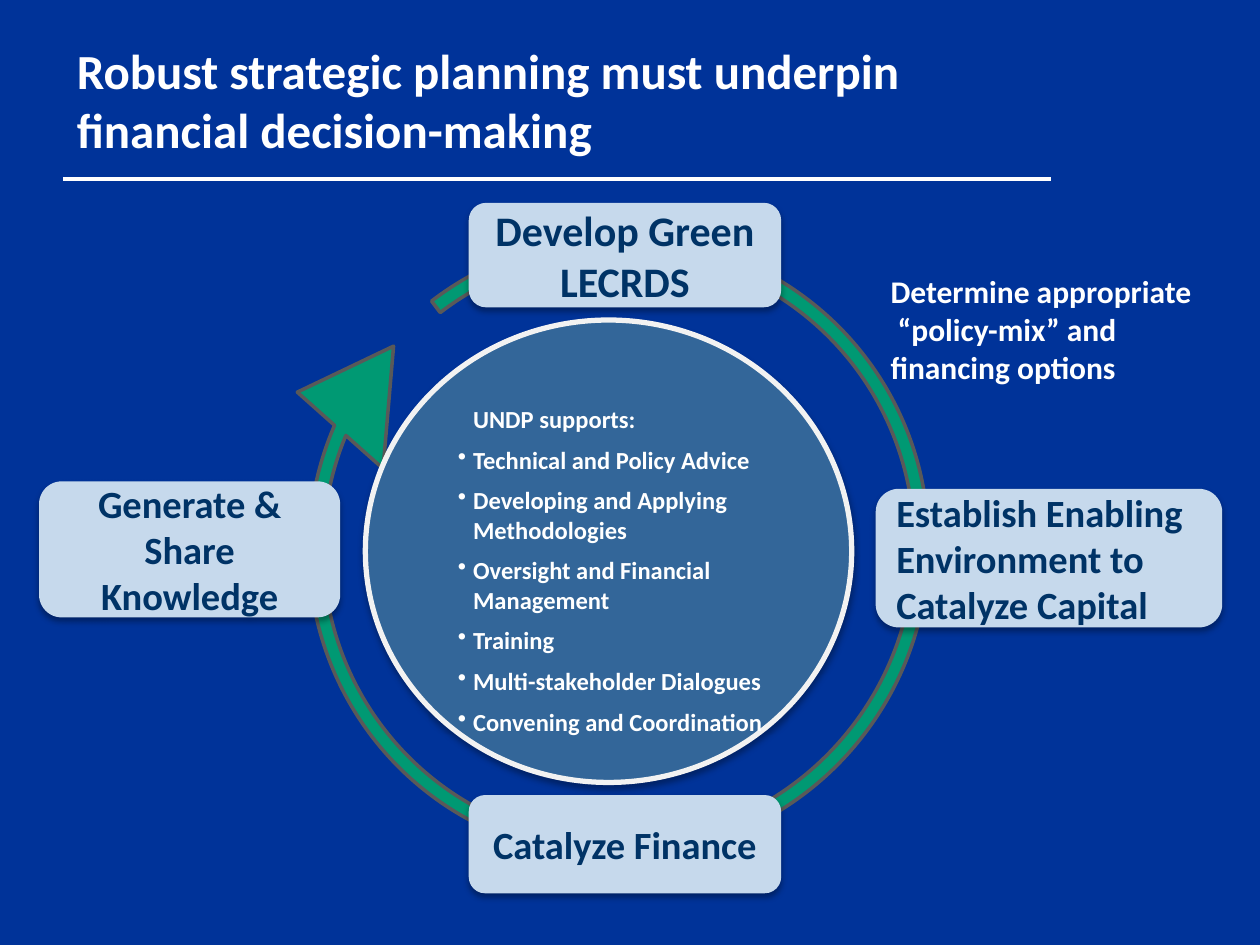
from lxml.etree import SubElement
from pptx import Presentation
from pptx.dml.color import RGBColor
from pptx.enum.shapes import MSO_CONNECTOR, MSO_SHAPE
from pptx.enum.text import MSO_ANCHOR, MSO_AUTO_SIZE, PP_ALIGN
from pptx.oxml.ns import qn
from pptx.util import Inches, Pt


def color(value):
    return RGBColor.from_string(value)


def apply_format(target, values):
    for name, value in values.items():
        setattr(target, name, value)


class CycleSlide:
    background = "003399"
    white = "FFFFFF"
    navy = "003366"
    font_name = "Calibri"

    def __init__(self, presentation):
        self.slide = presentation.slides.add_slide(presentation.slide_layouts[5])
        fill = self.slide.background.fill
        fill.solid()
        fill.fore_color.rgb = color(self.background)

    def format_frame(self, frame, anchor, side=0.1, top=0.05):
        apply_format(frame, {
            "word_wrap": True,
            "auto_size": MSO_AUTO_SIZE.NONE,
            "vertical_anchor": anchor,
            "margin_left": Inches(side),
            "margin_right": Inches(side),
            "margin_top": Inches(top),
            "margin_bottom": Inches(0.05),
        })

    def format_text(self, paragraph, text, size, text_color, alignment=PP_ALIGN.LEFT):
        paragraph.text = text
        paragraph.alignment = alignment
        apply_format(paragraph.font, {"name": self.font_name, "size": Pt(size), "bold": True})
        paragraph.font.color.rgb = color(text_color)

    def title(self, text, box):
        shape = self.slide.shapes.title
        apply_format(shape, dict(zip(("left", "top", "width", "height"), map(Inches, box))))
        self.format_frame(shape.text_frame, MSO_ANCHOR.TOP)
        self.format_text(shape.text_frame.paragraphs[0], text, 28, self.white)

    def shape(self, kind, box, fill, line=None, line_width=0, shadow=True):
        shape = self.slide.shapes.add_shape(kind, *map(Inches, box))
        shape.fill.solid()
        shape.fill.fore_color.rgb = color(fill)
        if line:
            shape.line.color.rgb = color(line)
            shape.line.width = Pt(line_width)
        else:
            shape.line.fill.background()
        shape.shadow.inherit = False
        if shadow:
            self.add_shadow(shape)
        return shape

    def add_shadow(self, shape):
        effects = shape._element.spPr.find(qn("a:effectLst"))
        outer = SubElement(effects, qn("a:outerShdw"), blurRad=str(Pt(3.5)),
                           dist=str(Pt(2.2)), dir="5400000", rotWithShape="0")
        black = SubElement(outer, qn("a:srgbClr"), val="000000")
        SubElement(black, qn("a:alpha"), val="32000")

    def cycle_arrow(self, box, rotation, adjustments):
        shape = self.shape(MSO_SHAPE.CIRCULAR_ARROW, box, "009973", "595959", 2, False)
        shape.rotation = rotation
        for index, value in enumerate(adjustments):
            shape.adjustments[index] = value

    def step(self, text, box, size=22, alignment=PP_ALIGN.CENTER):
        shape = self.shape(MSO_SHAPE.ROUNDED_RECTANGLE, box, "C6D9EC")
        self.format_frame(shape.text_frame, MSO_ANCHOR.MIDDLE, 0.11)
        self.format_text(shape.text_frame.paragraphs[0], text, size, self.navy, alignment)

    def support_circle(self, heading, items, box):
        shape = self.shape(MSO_SHAPE.OVAL, box, "336699", "F2F2F2", 3)
        frame = shape.text_frame
        self.format_frame(frame, MSO_ANCHOR.MIDDLE, 0.11, 0.35)
        for index, text in enumerate([heading, *items]):
            paragraph = frame.add_paragraph() if index else frame.paragraphs[0]
            properties = paragraph._p.get_or_add_pPr()
            properties.set("marL", str(Inches(0.18)))
            if index:
                properties.set("indent", str(Inches(-0.12)))
                SubElement(properties, qn("a:buChar"), char="•")
            self.format_text(paragraph, text, 14, self.white)
            paragraph.space_after = Pt(6.4)

    def rule(self, left, right, top):
        line = self.slide.shapes.add_connector(
            MSO_CONNECTOR.STRAIGHT, Inches(left), Inches(top), Inches(right), Inches(top))
        line.line.color.rgb = color(self.white)
        line.line.width = Pt(2.25)
        SubElement(line._element.spPr, qn("a:effectLst"))

    def label(self, text, box):
        shape = self.slide.shapes.add_textbox(*map(Inches, box))
        self.format_frame(shape.text_frame, MSO_ANCHOR.TOP)
        self.format_text(shape.text_frame.paragraphs[0], text, 18, self.white)


def main():
    presentation = Presentation()
    apply_format(presentation, {"slide_width": Inches(10), "slide_height": Inches(7.5)})
    cycle = CycleSlide(presentation)
    cycle.title("Robust strategic planning must underpin financial decision-making",
                (0.51, 0.27, 7.33, 1.04))
    cycle.cycle_arrow((2.06, 1.47, 5.7, 5.74), 221.4, (0.02, 11.42, 204.78, 6.79, 0.08))
    cycle.support_circle("UNDP supports:", [
        "Technical and Policy Advice",
        "Developing and Applying Methodologies",
        "Oversight and Financial Management",
        "Training",
        "Multi-stakeholder Dialogues",
        "Convening and Coordination",
    ], (2.9, 2.54, 3.86, 3.67))
    cycle.step("Develop Green LECRDS", (3.72, 1.61, 2.48, 0.83), size=24)
    cycle.step("Establish Enabling Environment to Catalyze Capital",
               (6.95, 3.88, 2.75, 1.1), alignment=PP_ALIGN.LEFT)
    cycle.step("Catalyze Finance", (3.72, 6.31, 2.48, 0.78))
    cycle.step("Generate & Share Knowledge", (0.31, 3.82, 2.39, 1.08))
    cycle.rule(0.5, 8.34, 1.42)
    cycle.label("Determine appropriate\v “policy-mix” and financing options",
                (6.97, 2.11, 2.63, 1.01))
    presentation.save("out.pptx")


if __name__ == "__main__":
    main()
